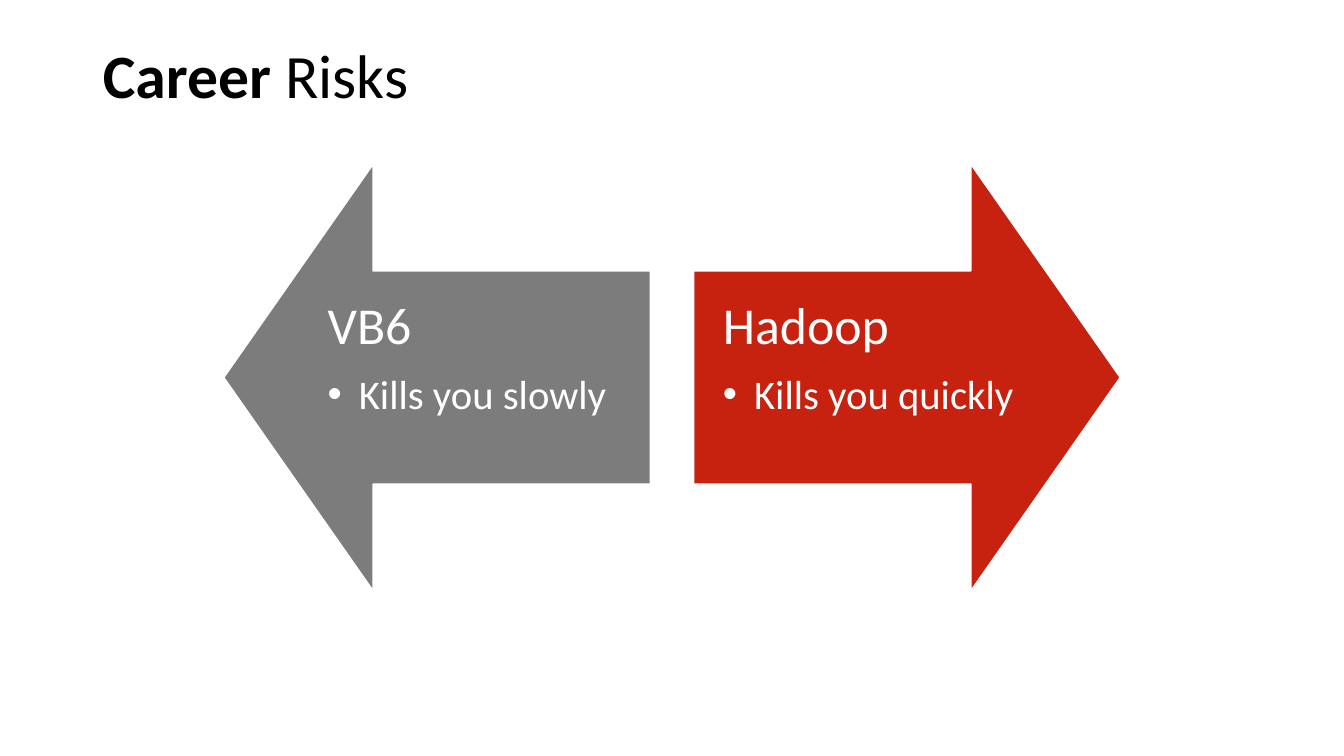
from lxml import etree
from pptx import Presentation
from pptx.dml.color import RGBColor
from pptx.enum.shapes import MSO_SHAPE
from pptx.enum.text import MSO_ANCHOR, PP_ALIGN
from pptx.oxml.ns import qn
from pptx.util import Inches, Pt

UP_ARROW = MSO_SHAPE.UP_ARROW
TOP = MSO_ANCHOR.TOP
LEFT = PP_ALIGN.LEFT

BLACK = RGBColor(0x00, 0x00, 0x00)
WHITE = RGBColor(0xFF, 0xFF, 0xFF)
GRAY = RGBColor(0x7C, 0x7C, 0x7C)
RED = RGBColor(0xC7, 0x21, 0x0F)

FONT = "Calibri"
WIDTH, HEIGHT = Inches(13.33), Inches(7.5)

# Arrow geometry: the shaft and head are shares of the arrow's side
SIDE = Inches(4.23)
GAP = Inches(0.43)
ARROW_TOP = Inches(1.63)
SHAFT, HEAD = 0.5, 0.35
TEXT_INSET = Inches(0.29)
BULLET_INDENT = Inches(0.31)

# Name, remark, fill, rotation
RISKS = [
    ("VB6", "Kills you slowly", GRAY, 270),
    ("Hadoop", "Kills you quickly", RED, 90),
]


def add_run(paragraph, text, size, color, bold=False):
    run = paragraph.add_run()
    run.text = text
    run.font.name = FONT
    run.font.size = Pt(size)
    run.font.bold = bold
    run.font.color.rgb = color


def format_paragraph(paragraph, space_after=0):
    paragraph.alignment = LEFT
    paragraph.line_spacing = 0.9
    paragraph.space_before = Pt(0)
    paragraph.space_after = Pt(space_after)


def add_bullet(paragraph):
    paragraph.level = 1
    properties = paragraph._p.get_or_add_pPr()
    properties.set("marL", str(BULLET_INDENT))
    properties.set("indent", str(-BULLET_INDENT))
    etree.SubElement(properties, qn("a:buFont")).set("typeface", "Arial")
    etree.SubElement(properties, qn("a:buChar")).set("char", "•")


def fill_title(title, left, top, width, height):
    title.left, title.top, title.width, title.height = left, top, width, height
    frame = title.text_frame
    frame.vertical_anchor = TOP
    heading = frame.paragraphs[0]
    format_paragraph(heading)
    add_run(heading, "Career", 44, BLACK, bold=True)
    add_run(heading, " Risks", 44, BLACK)


def add_risk(slide, left, top, side, risk):
    name, remark, color, rotation = risk

    # Arrow pointing away from the middle of the slide
    arrow = slide.shapes.add_shape(UP_ARROW, left, top, side, side)
    arrow.rotation = rotation
    arrow.adjustments[0] = SHAFT
    arrow.adjustments[1] = HEAD
    arrow.shadow.inherit = False
    arrow.fill.solid()
    arrow.fill.fore_color.rgb = color
    arrow.line.color.rgb = WHITE
    arrow.line.width = Pt(1)

    # Text over the shaft, reaching halfway into the head
    reach = int(side * HEAD / 2)
    text_left = left + reach if rotation == 270 else left
    label = slide.shapes.add_textbox(
        text_left, top + int(side * (1 - SHAFT) / 2),
        side - reach, int(side * SHAFT))
    frame = label.text_frame
    frame.word_wrap = True
    frame.vertical_anchor = TOP
    frame.margin_left = frame.margin_right = TEXT_INSET
    frame.margin_top = frame.margin_bottom = TEXT_INSET

    heading = frame.paragraphs[0]
    format_paragraph(heading, space_after=13)
    add_run(heading, name, 37, WHITE)

    point = frame.add_paragraph()
    format_paragraph(point, space_after=4)
    add_bullet(point)
    add_run(point, remark, 29, WHITE)


def main():
    deck = Presentation()
    deck.slide_width, deck.slide_height = WIDTH, HEIGHT
    slide = deck.slides.add_slide(deck.slide_layouts[5])

    fill_title(slide.shapes.title,
               Inches(0.92), Inches(0.4), Inches(11.5), Inches(1.45))

    first_left = (WIDTH - 2 * SIDE - GAP) // 2
    for column, risk in enumerate(RISKS):
        add_risk(slide, first_left + column * (SIDE + GAP), ARROW_TOP, SIDE, risk)

    deck.save("out.pptx")


if __name__ == "__main__":
    main()
